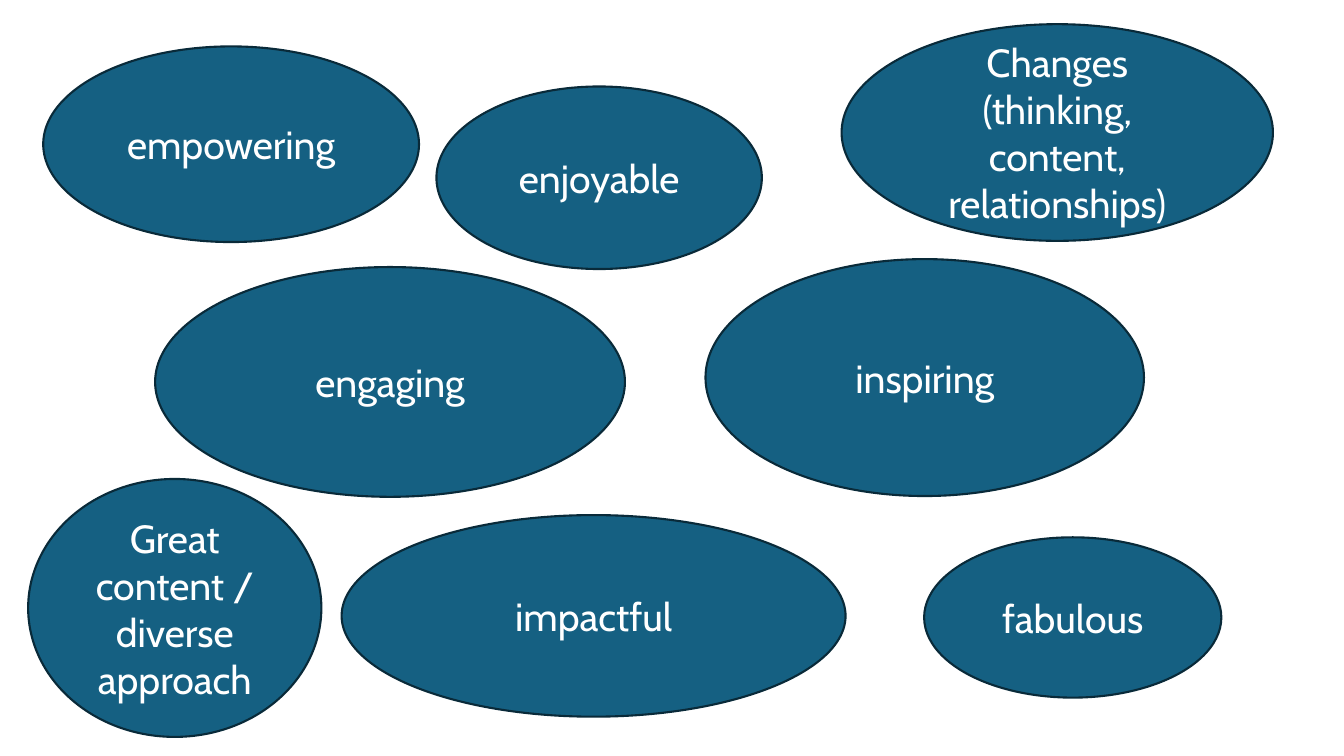
from pptx import Presentation
from pptx.dml.color import RGBColor
from pptx.enum.shapes import MSO_SHAPE
from pptx.enum.text import MSO_ANCHOR, PP_ALIGN
from pptx.util import Cm, Pt

BLUE = RGBColor(0x15, 0x60, 0x82)
NAVY = RGBColor(0x09, 0x2A, 0x39)
WHITE = RGBColor(0xFF, 0xFF, 0xFF)

FONT_FORMAT = {"name": "Cabin", "size": Pt(28)}
FRAME_FORMAT = {"word_wrap": True, "vertical_anchor": MSO_ANCHOR.MIDDLE}

QUALITIES = [
    ("empowering", 1.09, 1.17, 9.47, 4.93),
    ("engaging", 3.91, 6.73, 11.84, 5.79),
    ("inspiring", 17.78, 6.53, 11.05, 5.97),
    ("fabulous", 23.29, 13.54, 7.49, 4.04),
    ("enjoyable", 11, 2.18, 8.2, 4.6),
    ("impactful", 8.61, 12.98, 12.7, 5.08),
    ("Changes (thinking, content, relationships)", 21.21, 0.61, 10.87, 5.46),
    ("Great content / diverse approach", 0.71, 12.07, 7.39, 6.5),
]


def set_format(target, values):
    for name, value in values.items():
        setattr(target, name, value)


def add_label(shape, text):
    set_format(shape.text_frame, FRAME_FORMAT)
    paragraph = shape.text_frame.paragraphs[0]
    paragraph.text = text
    paragraph.alignment = PP_ALIGN.CENTER
    font = paragraph.runs[0].font
    set_format(font, FONT_FORMAT)
    font.color.rgb = WHITE


def add_bubble(slide, text, left, top, width, height):
    shape = slide.shapes.add_shape(
        MSO_SHAPE.OVAL, Cm(left), Cm(top), Cm(width), Cm(height)
    )
    shape.shadow.inherit = False
    shape.fill.solid()
    shape.fill.fore_color.rgb = BLUE
    shape.line.color.rgb = NAVY
    shape.line.width = Pt(1.5)
    add_label(shape, text)


def main():
    presentation = Presentation()
    set_format(presentation, {"slide_width": Cm(33.87), "slide_height": Cm(19.05)})
    slide = presentation.slides.add_slide(presentation.slide_layouts[6])
    for quality in QUALITIES:
        add_bubble(slide, *quality)
    presentation.save("out.pptx")


if __name__ == "__main__":
    main()
